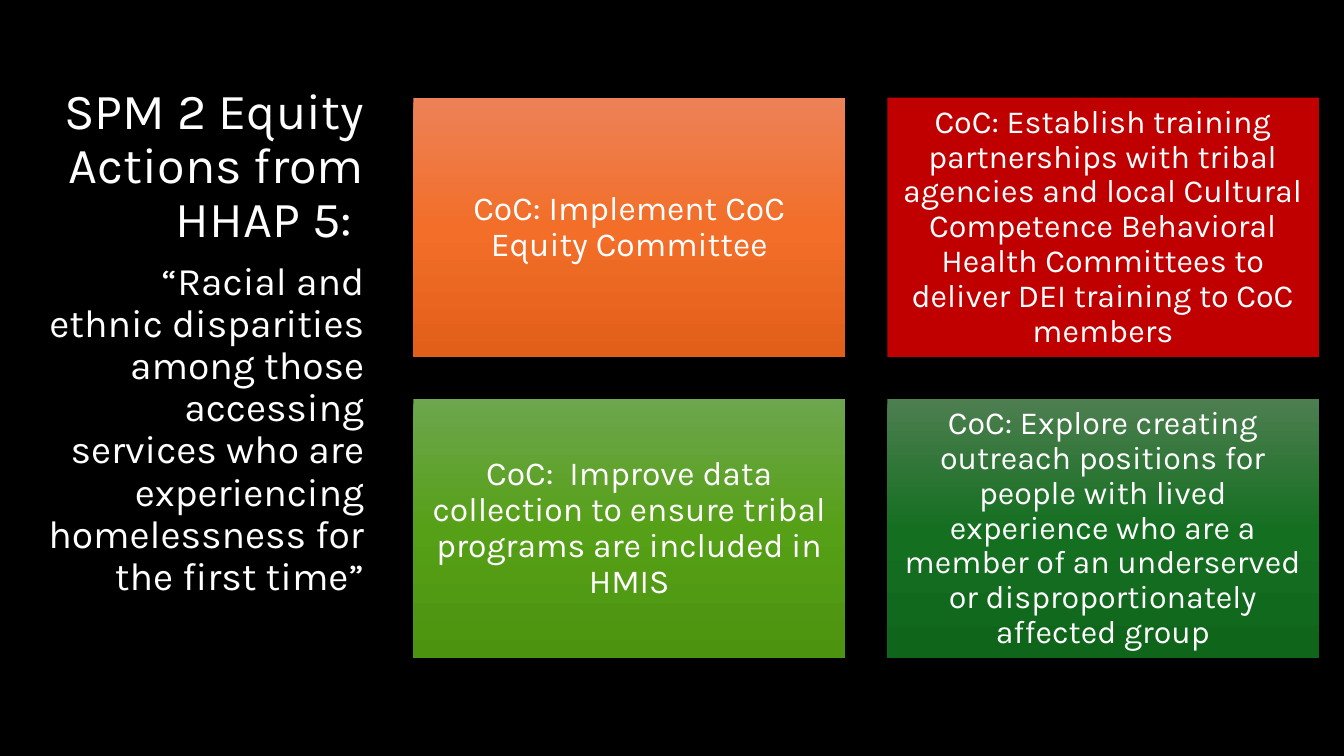
import copy
import pptx
import pptx.dml.color
import pptx.enum.shapes
import pptx.enum.text
import pptx.oxml.ns
import pptx.util

Inches = pptx.util.Inches
Align = pptx.enum.text.PP_ALIGN
Anchor = pptx.enum.text.MSO_ANCHOR

COLORS = {
    "background": "000000",
    "text": "FFFFFF",
    "orange": ["ED8257", "F26E29", "E25F1A"],
    "red": ["C00000"],
    "lime": ["6DA64E", "56A017", "4C930F"],
    "green": ["4D7E50", "156F21", "0F661B"],
}

CARDS = [
    ("orange", 24, "CoC: Implement CoC Equity Committee"),
    ("red", 23, "CoC: Establish training partnerships with tribal agencies and local Cultural "
                "Competence Behavioral Health Committees to deliver DEI training to CoC members"),
    ("lime", 24, "CoC:  Improve data collection to ensure tribal programs are included in HMIS"),
    ("green", 23, "CoC: Explore creating outreach positions for people with lived experience who are "
                  "a member of an underserved or disproportionately affected group"),
]
COLUMNS = 2
GRID_LEFT, GRID_TOP = 4.1, 0.97
CARD_WIDTH, CARD_HEIGHT = 4.28, 2.57
GAP = 0.42


def write(paragraph, text, size, alignment):
    paragraph.alignment = alignment
    paragraph.line_spacing = 0.9
    run = paragraph.add_run()
    run.text = text
    run.font.name = "Karla"
    run.font.size = pptx.util.Pt(size)
    run.font.color.rgb = pptx.dml.color.RGBColor.from_string(COLORS["text"])


def paint(shape, shades):
    if len(shades) == 1:
        shape.fill.solid()
        shape.fill.fore_color.rgb = pptx.dml.color.RGBColor.from_string(shades[0])
        return
    shape.fill.gradient()
    shape.fill.gradient_angle = 270
    stop_list = shape._element.spPr.find(".//" + pptx.oxml.ns.qn("a:gsLst"))
    stop_list.append(copy.deepcopy(stop_list[0]))
    for index, (stop, shade) in enumerate(zip(shape.fill.gradient_stops, shades)):
        stop.position = index / (len(shades) - 1)
        stop.color.rgb = pptx.dml.color.RGBColor.from_string(shade)


presentation = pptx.Presentation()
presentation.slide_width = Inches(13.33)
presentation.slide_height = Inches(7.5)
slide = presentation.slides.add_slide(presentation.slide_layouts[6])
slide.background.fill.solid()
slide.background.fill.fore_color.rgb = pptx.dml.color.RGBColor.from_string(COLORS["background"])

title = slide.shapes.add_textbox(Inches(0.33), Inches(0.8), Inches(3.38), Inches(5.2))
title.text_frame.word_wrap = True
title.text_frame.vertical_anchor = Anchor.TOP
write(title.text_frame.paragraphs[0], "SPM 2 Equity Actions from HHAP 5: ", 36, Align.RIGHT)
quote = title.text_frame.add_paragraph()
quote.space_before = pptx.util.Pt(9)
write(quote, "“Racial and ethnic disparities among those accessing services who are "
             "experiencing homelessness for the first time”", 27.9, Align.RIGHT)

for index, (color, size, text) in enumerate(CARDS):
    row, column = divmod(index, COLUMNS)
    card = slide.shapes.add_shape(
        pptx.enum.shapes.MSO_SHAPE.RECTANGLE,
        Inches(GRID_LEFT + column * (CARD_WIDTH + GAP)),
        Inches(GRID_TOP + row * (CARD_HEIGHT + GAP)),
        Inches(CARD_WIDTH), Inches(CARD_HEIGHT))
    card.shadow.inherit = False
    card.line.fill.background()
    paint(card, COLORS[color])
    frame = card.text_frame
    frame.word_wrap = True
    frame.vertical_anchor = Anchor.MIDDLE
    frame.margin_left = frame.margin_right = Inches(0.1)
    frame.margin_top = frame.margin_bottom = Inches(0.1)
    write(frame.paragraphs[0], text, size, Align.CENTER)

presentation.save("out.pptx")
